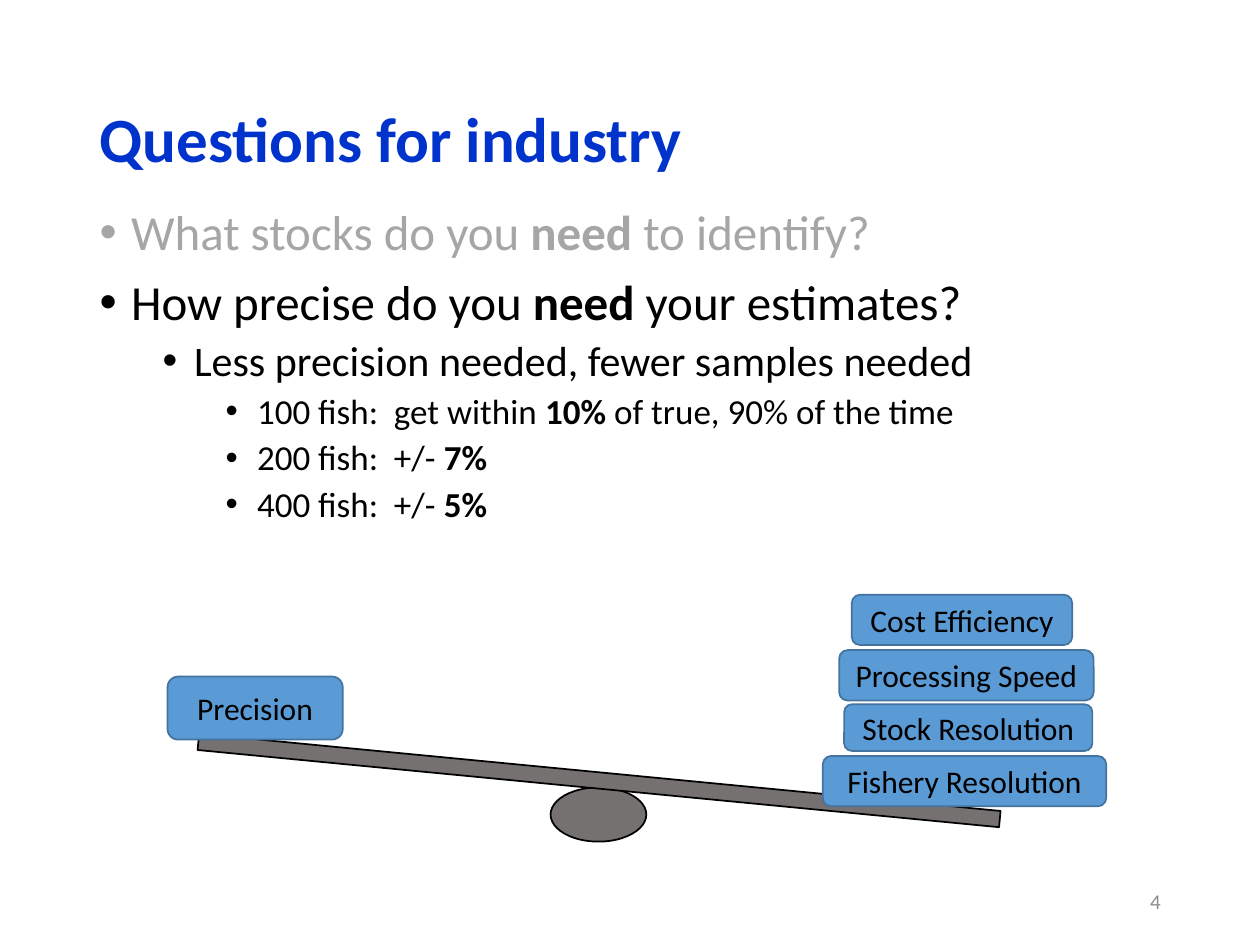
from lxml.etree import SubElement
from pptx import Presentation
from pptx.dml.color import RGBColor
from pptx.enum.shapes import MSO_SHAPE
from pptx.enum.text import MSO_ANCHOR, MSO_AUTO_SIZE, PP_ALIGN
from pptx.oxml.ns import qn
from pptx.util import Emu, Pt

PX = 9144  # EMU per px, 100 px to the inch

TITLE_BLUE = RGBColor(0x00, 0x33, 0xCC)
FADED = RGBColor(0xA6, 0xA6, 0xA6)
BLACK = RGBColor(0x00, 0x00, 0x00)
NUMBER_GREY = RGBColor(0x8C, 0x8C, 0x8C)
SEESAW_GREY = RGBColor(0x76, 0x71, 0x71)
WEIGHT_BLUE = RGBColor(0x5B, 0x9B, 0xD5)
WEIGHT_EDGE = RGBColor(0x43, 0x73, 0x9E)

# Level, colour, text; ** switches bold on and off
QUESTIONS = [
    (0, FADED, "What stocks do you **need** to identify?"),
    (0, BLACK, "How precise do you **need **your estimates?"),
    (1, BLACK, "Less precision needed, fewer samples needed"),
    (2, BLACK, "100 fish:  get within **10% **of true, 90% of the time"),
    (2, BLACK, "200 fish:  +/- **7%**"),
    (2, BLACK, "400 fish:  +/- **5%**"),
]
LEVEL_SIZES = [28, 24, 20]

# Text, then left, top, width and height within the seesaw's box
WEIGHTS = [
    ("Precision", (0, 65, 139, 50)),
    ("Cost Efficiency", (543, 0, 175, 40)),
    ("Processing Speed", (533, 44, 202, 40)),
    ("Stock Resolution", (537, 87, 197, 37)),
    ("Fishery Resolution", (520, 128, 225, 40)),
]


def emu(*lengths):
    return [Emu(length * PX) for length in lengths]


def apply_format(target, values):
    for name, value in values.items():
        setattr(target, name, value)


def place(shape, box):
    apply_format(shape, dict(zip(("left", "top", "width", "height"), emu(*box))))


def write(paragraph, text, size, color, bold=False):
    """Add the text as runs, with bold switched at each **."""
    for index, part in enumerate(text.split("**")):
        if part:
            run = paragraph.add_run()
            run.text = part
            apply_format(run.font, {"name": "Calibri", "size": Pt(size),
                                    "bold": bold or index % 2 == 1})
            run.font.color.rgb = color


def add_title(slide, box):
    title = slide.shapes.title
    place(title, box)
    apply_format(title.text_frame, {"vertical_anchor": MSO_ANCHOR.MIDDLE,
                                    "auto_size": MSO_AUTO_SIZE.NONE})
    paragraph = title.text_frame.paragraphs[0]
    apply_format(paragraph, {"alignment": PP_ALIGN.LEFT, "line_spacing": 0.9})
    write(paragraph, "Questions for industry", 36, TITLE_BLUE, bold=True)


def set_bullet(paragraph, level):
    properties = paragraph._p.get_or_add_pPr()
    margin, hanging = emu(25 + 50 * level, -25)
    properties.set("marL", str(margin))
    properties.set("indent", str(hanging))
    SubElement(properties, qn("a:buFont"), typeface="Arial")
    SubElement(properties, qn("a:buChar"), char="•")


def add_questions(slide, box):
    body = slide.placeholders[1]
    place(body, box)
    frame = body.text_frame
    frame.auto_size = MSO_AUTO_SIZE.NONE
    for index, (level, color, text) in enumerate(QUESTIONS):
        paragraph = frame.add_paragraph() if index else frame.paragraphs[0]
        apply_format(paragraph, {"level": level, "line_spacing": 0.9,
                                 "space_before": Pt(5 if level else 10)})
        set_bullet(paragraph, level)
        write(paragraph, text, LEVEL_SIZES[level], color)


def add_slide_number(slide, box):
    number = slide.shapes.add_textbox(*emu(*box))
    apply_format(number.text_frame, {"vertical_anchor": MSO_ANCHOR.MIDDLE,
                                     "word_wrap": True})
    paragraph = number.text_frame.paragraphs[0]
    paragraph.alignment = PP_ALIGN.RIGHT
    write(paragraph, "4", 12, NUMBER_GREY)


def add_part(slide, kind, box, fill, edge):
    shape = slide.shapes.add_shape(kind, *emu(*box))
    shape.shadow.inherit = False
    shape.fill.solid()
    shape.fill.fore_color.rgb = fill
    shape.line.color.rgb = edge
    shape.line.width = Pt(1)
    return shape


def add_seesaw(slide, box):
    left, top = box[:2]

    def inside(part_box):
        x, y, width, height = part_box
        return left + x, top + y, width, height

    # Pivot and tilted plank
    add_part(slide, MSO_SHAPE.OVAL, inside((304, 153, 76, 43)), SEESAW_GREY, BLACK)
    plank = add_part(slide, MSO_SHAPE.RECTANGLE, inside((23, 141, 639, 13)),
                     SEESAW_GREY, BLACK)
    plank.rotation = 5.5

    # Weights on both ends
    for text, part_box in WEIGHTS:
        weight = add_part(slide, MSO_SHAPE.ROUNDED_RECTANGLE, inside(part_box),
                          WEIGHT_BLUE, WEIGHT_EDGE)
        apply_format(weight.text_frame, {"vertical_anchor": MSO_ANCHOR.MIDDLE,
                                         "word_wrap": False})
        paragraph = weight.text_frame.paragraphs[0]
        paragraph.alignment = PP_ALIGN.CENTER
        write(paragraph, text, 18, BLACK)


def main():
    presentation = Presentation()
    apply_format(presentation, dict(zip(("slide_width", "slide_height"), emu(1000, 750))))
    slide = presentation.slides.add_slide(presentation.slide_layouts[1])
    add_title(slide, (69, 40, 862, 145))
    add_questions(slide, (69, 160, 862, 476))
    add_slide_number(slide, (706, 695, 225, 40))
    add_seesaw(slide, (133, 472, 745, 196))
    presentation.save("out.pptx")


if __name__ == "__main__":
    main()
